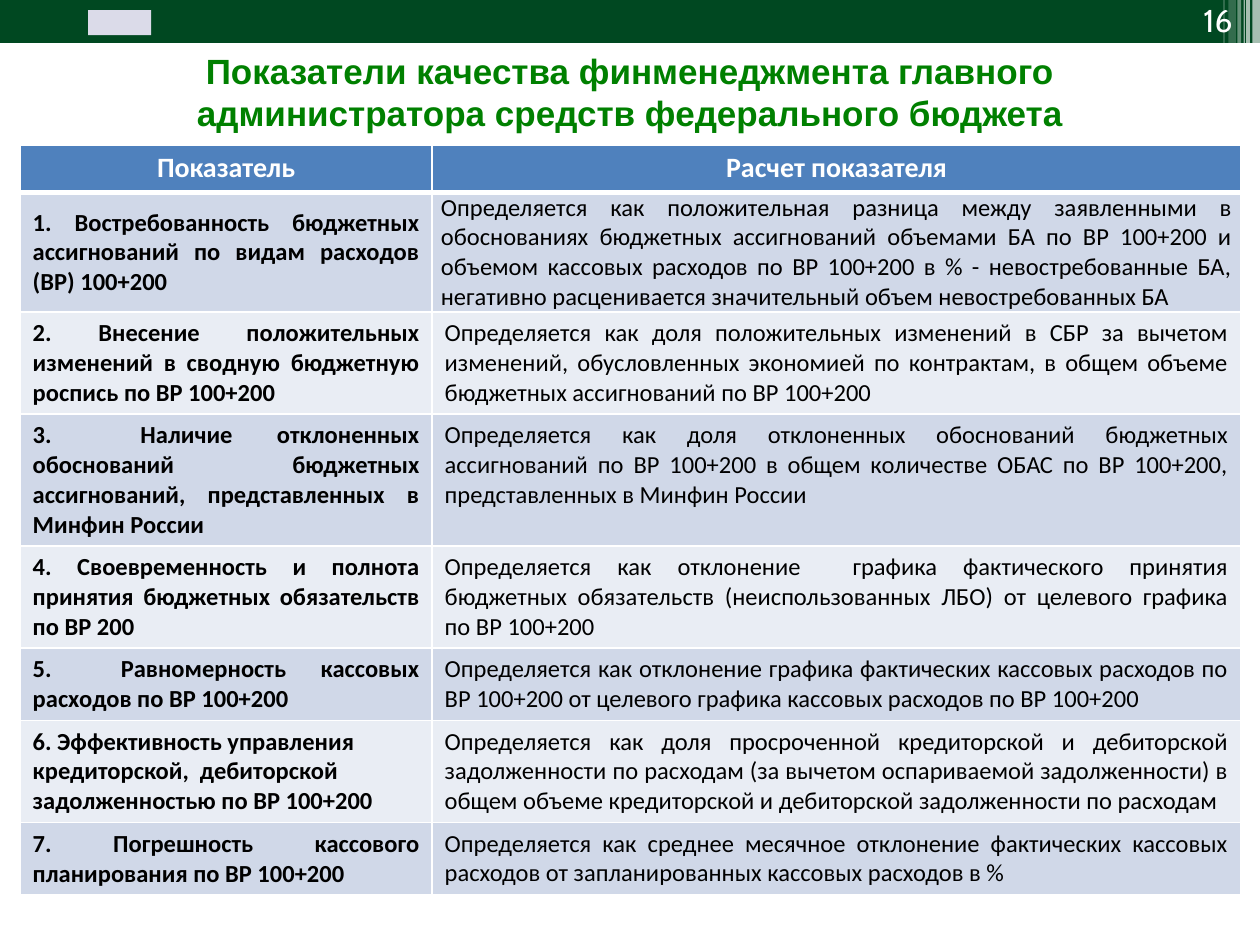
from lxml import etree
from pptx import Presentation
from pptx.dml.color import RGBColor
from pptx.enum.shapes import MSO_SHAPE
from pptx.enum.text import MSO_ANCHOR, PP_ALIGN
from pptx.oxml.ns import qn
from pptx.util import Inches, Pt

RECTANGLE = MSO_SHAPE.RECTANGLE
TOP, MIDDLE, BOTTOM = MSO_ANCHOR.TOP, MSO_ANCHOR.MIDDLE, MSO_ANCHOR.BOTTOM
LEFT, CENTER, RIGHT, JUSTIFY = PP_ALIGN.LEFT, PP_ALIGN.CENTER, PP_ALIGN.RIGHT, PP_ALIGN.JUSTIFY

COLORS = {
    "band": "004821", "white": "FFFFFF", "emblem": "DBDBE9", "title": "008000",
    "header": "4F81BD", "odd": "D0D8E8", "even": "E9EDF4", "text": "000000",
}

TITLE = "Показатели качества финменеджмента главного администратора средств федерального бюджета"
PAGE_NUMBER = "16"
HEADINGS = ("Показатель", "Расчет показателя")
INDICATORS = [
    ("1. Востребованность бюджетных ассигнований по видам расходов (ВР) 100+200",
     "Определяется как положительная разница между заявленными в обоснованиях бюджетных "
     "ассигнований объемами БА по ВР 100+200 и объемом кассовых расходов по ВР 100+200 в % - "
     "невостребованные БА, негативно расценивается значительный объем невостребованных БА"),
    ("2. Внесение положительных изменений в сводную бюджетную роспись по ВР 100+200",
     "Определяется как доля положительных изменений в СБР за вычетом изменений, обусловленных "
     "экономией по контрактам, в общем объеме бюджетных ассигнований по ВР 100+200"),
    ("3.  Наличие отклоненных обоснований бюджетных ассигнований, представленных в Минфин России",
     "Определяется как доля отклоненных обоснований бюджетных ассигнований по ВР 100+200 в общем "
     "количестве ОБАС по ВР 100+200, представленных в Минфин России"),
    ("4. Своевременность и полнота принятия бюджетных обязательств по ВР 200",
     "Определяется как отклонение  графика фактического принятия бюджетных обязательств "
     "(неиспользованных ЛБО) от целевого графика по ВР 100+200"),
    ("5.  Равномерность кассовых расходов по ВР 100+200",
     "Определяется как отклонение графика фактических кассовых расходов по ВР 100+200 от "
     "целевого графика кассовых расходов по ВР 100+200"),
    ("6. Эффективность управления  кредиторской,  дебиторской задолженностью по ВР 100+200",
     "Определяется как доля просроченной кредиторской и дебиторской задолженности по расходам "
     "(за вычетом оспариваемой задолженности) в общем объеме кредиторской и дебиторской "
     "задолженности по расходам"),
    ("7. Погрешность кассового планирования по ВР 100+200",
     "Определяется как среднее месячное отклонение фактических кассовых расходов от "
     "запланированных кассовых расходов в %"),
]
LEFT_ALIGNED_ROW = 6
TIGHT_ROW = 1
COLUMN_WIDTHS = (3.27, 6.42)
ROW_HEIGHTS = (0.38, 0.92, 0.8, 1.03, 0.8, 0.57, 0.8, 0.56)

# left, width, height, opacity in percent
STRIPES = [
    (9.94, 0.06, 0.34, 65), (9.89, 0.03, 0.34, 65), (9.87, 0.01, 0.34, 60),
    (9.82, 0.03, 0.34, 40), (9.75, 0.06, 0.36, 20), (9.71, 0.01, 0.36, 30),
]

HEADER_FONT = {"name": "Calibri", "size": Pt(16), "bold": True}
NAME_FONT = {"name": "Calibri", "size": Pt(14), "bold": True}
FORMULA_FONT = {"name": "Calibri", "size": Pt(14), "bold": False}
TITLE_FONT = {"name": "Arial", "size": Pt(20), "bold": True}
NUMBER_FONT = {"name": "Cabin", "size": Pt(18), "bold": False}


def rgb(name):
    return RGBColor.from_string(COLORS[name])


def add_block(page, box, color, opacity=100):
    block = page.shapes.add_shape(RECTANGLE, *map(Inches, box))
    block.shadow.inherit = False
    block.line.fill.background()
    block.fill.solid()
    block.fill.fore_color.rgb = rgb(color)
    if opacity < 100:
        tint = block.fill._xPr.find(".//" + qn("a:srgbClr"))
        etree.SubElement(tint, qn("a:alpha"), val=str(opacity * 1000))


def write(frame, text, font, color, align):
    frame.word_wrap = True
    para = frame.paragraphs[0]
    para.alignment = align
    span = para.add_run()
    span.text = text
    for key, value in font.items():
        setattr(span.font, key, value)
    span.font.color.rgb = rgb(color)


def set_borders(cell, widths):
    """Draw white borders; widths maps the side letters L, R, T, B to points."""
    properties = cell._tc.get_or_add_tcPr()
    for side, width in widths.items():
        line = etree.SubElement(properties, qn("a:ln" + side), w=str(Pt(width)))
        fill = etree.SubElement(line, qn("a:solidFill"))
        etree.SubElement(fill, qn("a:srgbClr"), val=COLORS["white"])


def fill_cell(cell, row, column, text):
    set_borders(cell, {"L": 1, "R": 1, "T": 3 if row == 1 else 1, "B": 3 if row == 0 else 1})
    if row == 0:
        fill, font, color, align = "header", HEADER_FONT, "white", CENTER
    else:
        fill, color = ("odd" if row % 2 else "even"), "text"
        font = FORMULA_FONT if column else NAME_FONT
        align = LEFT if (row, column) == (LEFT_ALIGNED_ROW, 0) else JUSTIFY
    cell.fill.solid()
    cell.fill.fore_color.rgb = rgb(fill)
    cell.vertical_anchor = MIDDLE if row and not column else TOP
    if (row, column) == (TIGHT_ROW, 1):
        cell.margin_left = cell.margin_right = Inches(0.07)
        cell.margin_top = cell.margin_bottom = 0
    write(cell.text_frame, text, font, color, align)


def add_indicator_table(page):
    rows = [HEADINGS, *INDICATORS]
    table = page.shapes.add_table(
        len(rows), len(HEADINGS), Inches(0.16), Inches(1.15),
        Inches(sum(COLUMN_WIDTHS)), Inches(sum(ROW_HEIGHTS))).table
    for column, width in zip(table.columns, COLUMN_WIDTHS):
        column.width = Inches(width)
    for number, (texts, height) in enumerate(zip(rows, ROW_HEIGHTS)):
        table.rows[number].height = Inches(height)
        for column, text in enumerate(texts):
            fill_cell(table.cell(number, column), number, column, text)


def main():
    deck = Presentation()
    deck.slide_width, deck.slide_height = Inches(10), Inches(7.5)
    page = deck.slides.add_slide(deck.slide_layouts[5])

    add_block(page, (0, 0, 10, 0.34), "band")
    for left, width, height, opacity in STRIPES:
        add_block(page, (left, 0, width, height), "white", opacity)
    add_block(page, (0.7, 0.08, 0.5, 0.2), "emblem")

    add_indicator_table(page)

    title = page.shapes.title
    title.left, title.top, title.width, title.height = map(Inches, (0.62, 0.34, 8.76, 0.77))
    title.text_frame.vertical_anchor = TOP
    write(title.text_frame, TITLE, TITLE_FONT, "title", CENTER)

    number = page.shapes.add_textbox(*map(Inches, (9.05, -0.04, 0.83, 0.4)))
    number.text_frame.vertical_anchor = BOTTOM
    write(number.text_frame, PAGE_NUMBER, NUMBER_FONT, "white", RIGHT)

    deck.save("out.pptx")


if __name__ == "__main__":
    main()
